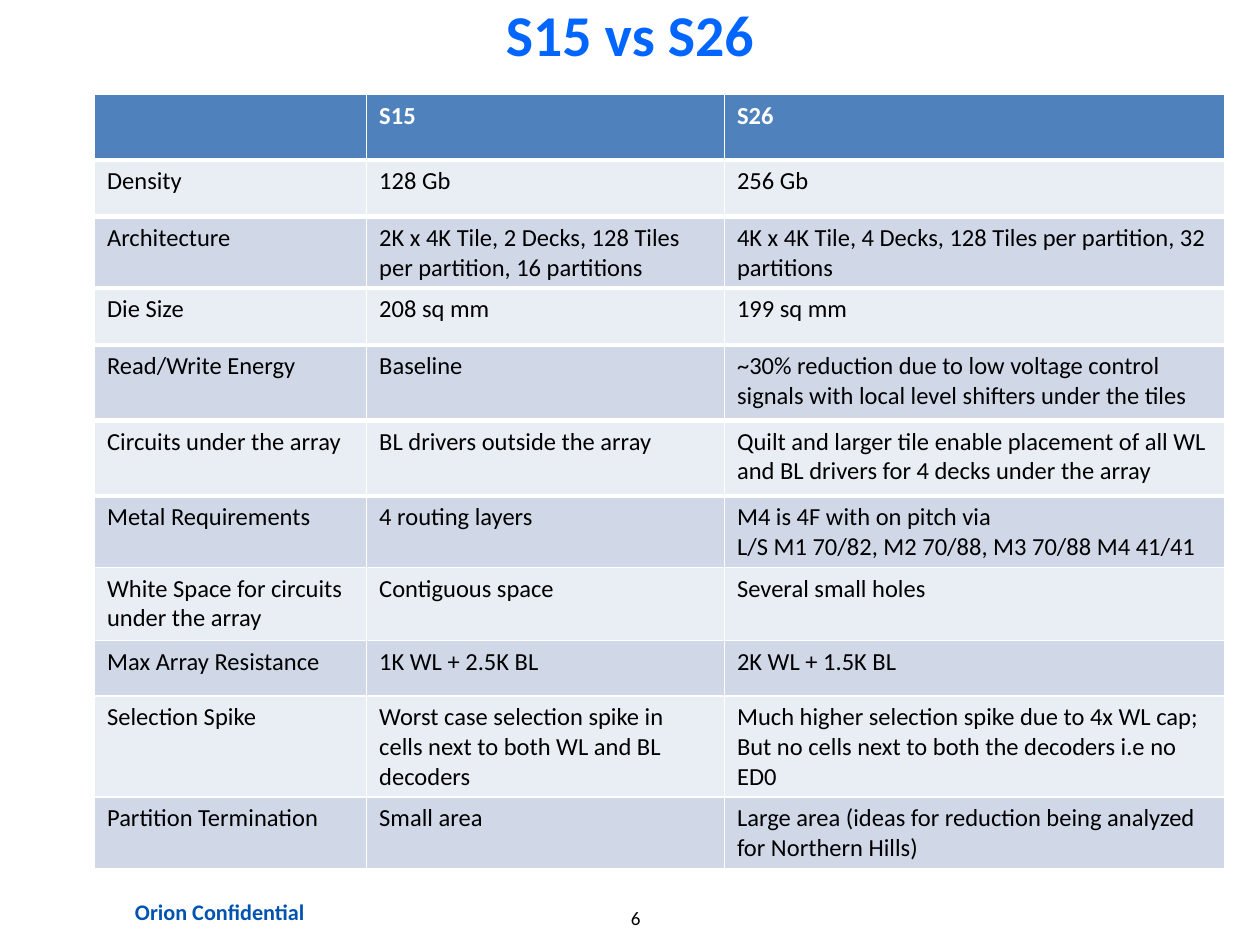
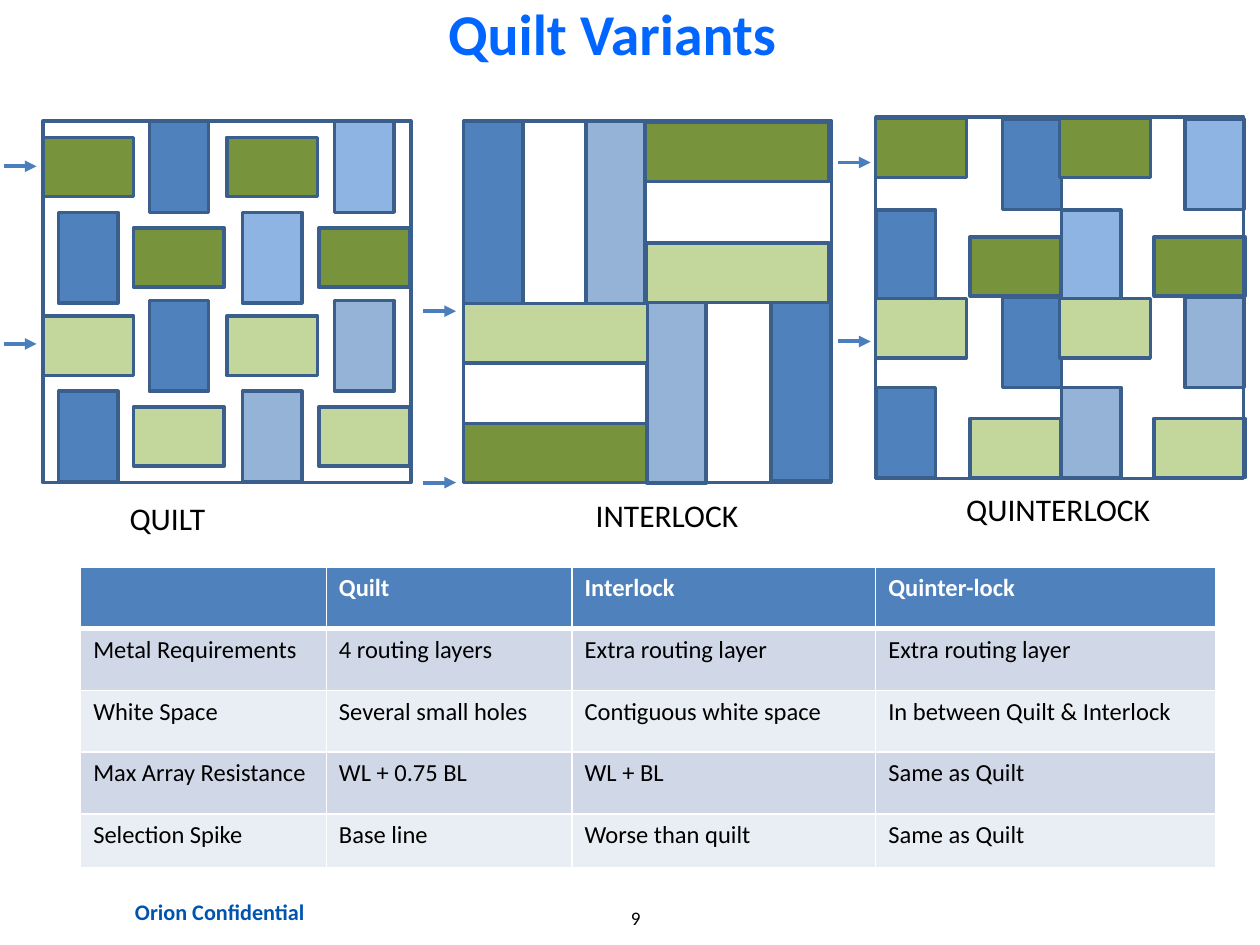
from itertools import product

from lxml.etree import SubElement
from pptx import Presentation
from pptx.dml.color import RGBColor
from pptx.enum.shapes import MSO_CONNECTOR as CONN, MSO_SHAPE as SHAPE
from pptx.enum.text import MSO_ANCHOR as ANCHOR, PP_ALIGN as ALIGN
from pptx.oxml.ns import qn
from pptx.util import Inches, Pt

FONT = "Calibri"
BLACK = RGBColor(0x00, 0x00, 0x00)
WHITE = RGBColor(0xFF, 0xFF, 0xFF)
TITLE_BLUE = RGBColor(0x00, 0x66, 0xFF)
FOOTER_BLUE = RGBColor(0x00, 0x54, 0xB0)
BLUE = RGBColor(0x4F, 0x81, 0xBD)
SKY = RGBColor(0x8E, 0xB4, 0xE3)
STEEL = RGBColor(0x95, 0xB3, 0xD7)
GREEN = RGBColor(0x77, 0x93, 0x3C)
LIME = RGBColor(0xC3, 0xD6, 0x9B)
OUTLINE = RGBColor(0x3A, 0x5F, 0x8C)
ARROW = RGBColor(0x4B, 0x7E, 0xBC)
PALE = RGBColor(0xE9, 0xED, 0xF4)
BAND = RGBColor(0xD0, 0xD8, 0xE8)


def write(tf, text, size=14, color=BLACK, bold=False, align=ALIGN.LEFT,
          anchor=ANCHOR.TOP, margins=None):
    tf.word_wrap = True
    tf.vertical_anchor = anchor
    if margins:
        tf.margin_left = tf.margin_right = Inches(margins[0])
        tf.margin_top = tf.margin_bottom = Inches(margins[1])
    elif margins == ():
        tf.margin_left = tf.margin_right = tf.margin_top = tf.margin_bottom = 0
    for i, line in enumerate(text.split("\n")):
        p = tf.paragraphs[0] if i == 0 else tf.add_paragraph()
        p.alignment = align
        if line:
            r = p.add_run()
            r.text = line
            r.font.name = FONT
            r.font.size = Pt(size)
            r.font.bold = bold
            r.font.color.rgb = color


def add_tile(s, x, y, w, h, fill=None, upright=False):
    sp = s.shapes.add_shape(SHAPE.RECTANGLE, Inches(x), Inches(y), Inches(w), Inches(h))
    sp.shadow.inherit = False
    sp.rotation = 90 if upright else 0
    if fill is None:
        sp.fill.background()
    else:
        sp.fill.solid()
        sp.fill.fore_color.rgb = fill
    sp.line.color.rgb = OUTLINE
    sp.line.width = Pt(2)


comparison = [
    ("", "S15", "S26"),
    ("Density", "128 Gb", "256 Gb"),
    ("Architecture", "2K x 4K Tile, 2 Decks, 128 Tiles per partition, 16 partitions",
     "4K x 4K Tile, 4 Decks, 128 Tiles per partition, 32 partitions"),
    ("Die Size", "208 sq mm", "199 sq mm"),
    ("Read/Write Energy", "Baseline",
     "~30% reduction due to low voltage control signals with local level shifters under the tiles"),
    ("Circuits under the array", "BL drivers outside the array",
     "Quilt and larger tile enable placement of all WL and BL drivers for 4 decks under the array"),
    ("Metal Requirements", "4 routing layers",
     "M4 is 4F with on pitch via\nL/S M1 70/82, M2 70/88, M3 70/88 M4 41/41"),
    ("White Space for circuits under the array", "Contiguous space", "Several small holes"),
    ("Max Array Resistance", "1K WL + 2.5K BL", "2K WL + 1.5K BL"),
    ("Selection Spike", "Worst case selection spike in cells next to both WL and BL decoders",
     "Much higher selection spike due to 4x WL cap; But no cells next to both the decoders i.e no ED0"),
    ("Partition Termination", "Small area",
     "Large area (ideas for reduction being analyzed for Northern Hills)"),
]
variants = [
    ("", "Quilt", "Interlock", "Quinter-lock"),
    ("Metal Requirements", "4 routing layers", "Extra routing layer", "Extra routing layer"),
    ("White Space", "Several small holes", "Contiguous white space", "In between Quilt & Interlock"),
    ("Max Array Resistance", "WL + 0.75 BL", "WL + BL", "Same as Quilt"),
    ("Selection Spike", "Base line", "Worse than quilt", "Same as Quilt"),
]
pages = [
    ("S15 vs S26", 0.75, 0, 0.53, "6", comparison, 0.75, 0.75, [2.16, 2.84, 3.97],
     [0.52, 0.45, 0.45, 0.45, 0.6, 0.6, 0.4, 0.58, 0.44, 0.52, 0.52],
     [1] + [3] * 6 + [1] * 5, (BAND, PALE)),
    ("Quilt Variants", 0.61, 0.01, 0.49, "9", variants, 0.64, 4.5, [1.95, 1.95, 2.41, 2.7],
     [0.49] * 4 + [0.43], [1, 3, 1, 1, 1, 1], (PALE, BAND)),
]

prs = Presentation()
prs.slide_width = Inches(10)
prs.slide_height = Inches(7.5)

for title, title_x, title_y, title_h, number, rows, x, y, widths, heights, rules, bands in pages:
    s = prs.slides.add_slide(prs.slide_layouts[6])
    for text, box, style in [
        (number, (4.17, 7.19, 1.75, 0.18), dict(size=10.9, margins=())),
        ("Orion Confidential", (0.91, 7.08, 1.67, 0.31),
         dict(size=12.7, color=FOOTER_BLUE, bold=True, margins=(0.09, 0.05))),
        (title, (title_x, title_y, 8.5, title_h),
         dict(size=33, color=TITLE_BLUE, bold=True, anchor=ANCHOR.MIDDLE, margins=(0.1, 0.05))),
    ]:
        sp = s.shapes.add_textbox(*map(Inches, box))
        write(sp.text_frame, text, align=ALIGN.CENTER, **style)

    table = s.shapes.add_table(len(rows), len(widths), Inches(x), Inches(y),
                               Inches(sum(widths)), Inches(sum(heights))).table
    table.first_row = table.horz_banding = False
    for col, width in zip(table.columns, widths):
        col.width = Inches(width)
    for i, row in enumerate(rows):
        table.rows[i].height = Inches(heights[i])
        for j, text in enumerate(row):
            cell = table.cell(i, j)
            tcPr = cell._tc.get_or_add_tcPr()
            for side, weight in (("L", 1), ("R", 1), ("T", rules[i]), ("B", rules[i + 1])):
                ln = SubElement(tcPr, qn(f"a:ln{side}"), w=str(Pt(weight)))
                SubElement(SubElement(ln, qn("a:solidFill")), qn("a:srgbClr"), val=str(WHITE))
            cell.fill.solid()
            cell.fill.fore_color.rgb = bands[i % 2] if i else BLUE
            write(cell.text_frame, text, color=BLACK if i else WHITE, bold=i == 0)

quilt_x = [0.34, 1.06, 1.8, 2.53]
weaves = [
    ([quilt_x, quilt_x], [(1.09, 1.09), (1.81, 1.81), (2.51, 2.51), (3.23, 3.23)], (0.34, 0.96)),
    ([[6.95, 7.83, 8.41, 9.28], [6.83, 7.7, 8.3, 9.16]],
     [(0.94, 1.07), (1.79, 1.88), (2.37, 2.48), (3.2, 3.32)], (6.95, 0.93)),
]
for xs, ys, frame in weaves:
    for half, i, side in product(range(2), range(4), range(2)):
        j = 2 * half + side
        upright = (i + j) % 2 == 1
        if upright:
            fill = BLUE if half == 0 else SKY if i < 2 else STEEL
        else:
            fill = GREEN if i < 2 else LIME
        add_tile(s, xs[i % 2][j], ys[i][side], 0.72, 0.47, fill, upright)
    add_tile(s, *frame, 2.92, 2.87)

add_tile(s, 3.68, 0.96, 2.92, 2.87)
for x, y, length, fill, upright in [
    (3.19, 1.45, 1.45, BLUE, True),
    (4.65, 2.88, 1.44, STEEL, True),
    (5.64, 2.87, 1.43, BLUE, True),
    (4.16, 1.45, 1.45, STEEL, True),
    (3.68, 2.41, 1.46, LIME, False),
    (5.12, 0.97, 1.46, GREEN, False),
    (5.13, 1.93, 1.45, LIME, False),
    (3.68, 3.36, 1.45, GREEN, False),
]:
    add_tile(s, x, y, length, 0.47, fill, upright)

for label, x, y, w in [("QUILT", 0.93, 3.91, 1.57), ("INTERLOCK", 4.63, 3.89, 1.57),
                       ("QUINTERLOCK", 7.57, 3.84, 1.7)]:
    sp = s.shapes.add_textbox(Inches(x), Inches(y), Inches(w), Inches(0.4))
    write(sp.text_frame, label, size=18)

for x, y in [(0.03, 1.32), (0.03, 2.73), (3.36, 2.47), (3.36, 3.83), (6.65, 1.29), (6.65, 2.71)]:
    arrow = s.shapes.add_connector(CONN.STRAIGHT, Inches(x), Inches(y), Inches(x + 0.26), Inches(y))
    arrow.line.color.rgb = ARROW
    arrow.line.width = Pt(2.25)
    SubElement(arrow.line._get_or_add_ln(), qn("a:tailEnd"), type="triangle")
    SubElement(arrow._element.spPr, qn("a:effectLst"))

prs.save("out.pptx")
